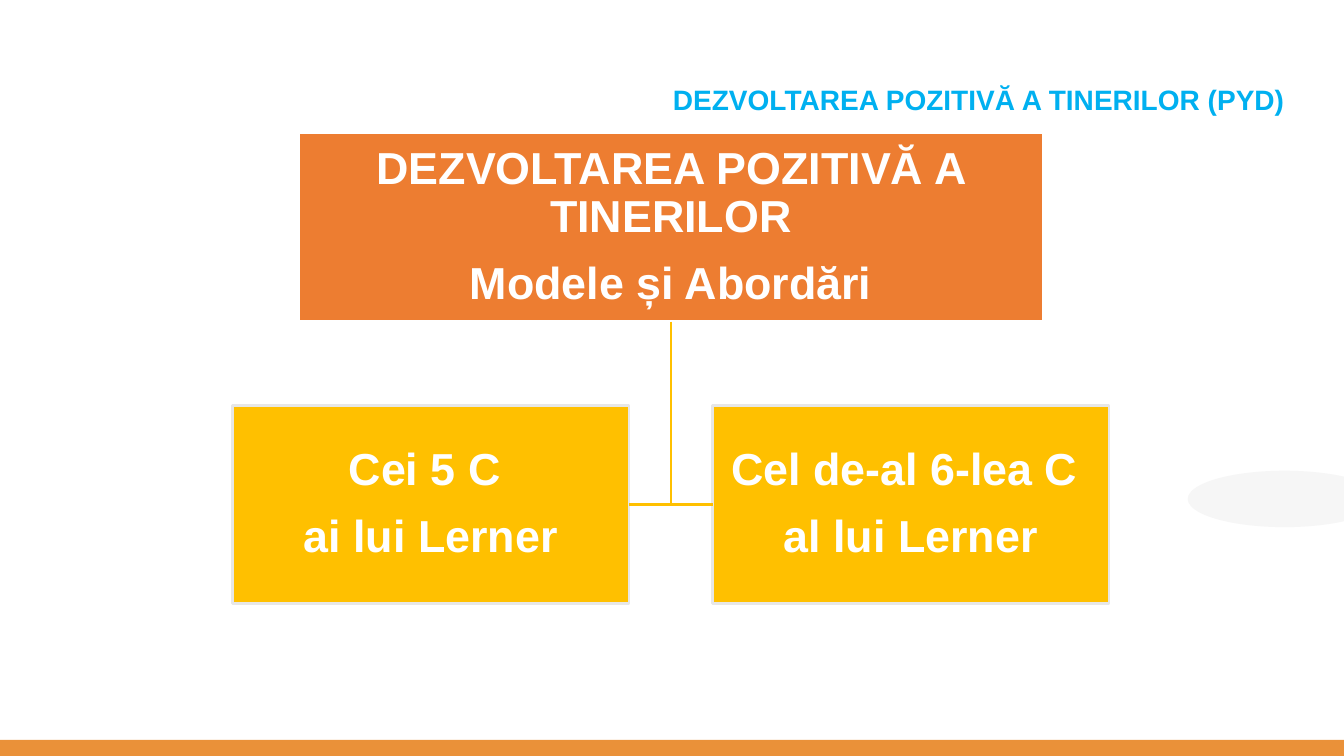
import pptx
import pptx.util
import pptx.dml.color
import pptx.enum.shapes
import pptx.enum.text
import pptx.oxml.ns
import lxml.etree

Inches = pptx.util.Inches
SHAPE = pptx.enum.shapes.MSO_SHAPE
ALIGN = pptx.enum.text.PP_ALIGN
ANCHOR = pptx.enum.text.MSO_ANCHOR
WIDE, HIGH = 13.33, 7.5
GOLD = "FFC000"


def paint(target, color):
    """Give a fill or a font a solid colour."""
    if hasattr(target, "solid"):
        target.solid()
        target = target.fore_color
    else:
        target = target.color
    target.rgb = pptx.dml.color.RGBColor.from_string(color)


def write(shape, lines, size=32, color="FFFFFF", align=ALIGN.CENTER,
          anchor=ANCHOR.MIDDLE, pad=(0.02, 0.02), after=0):
    frame = shape.text_frame
    frame.word_wrap = True
    frame.auto_size = pptx.enum.text.MSO_AUTO_SIZE.NONE
    frame.vertical_anchor = anchor
    frame.margin_left = frame.margin_right = Inches(pad[0])
    frame.margin_top = frame.margin_bottom = Inches(pad[1])
    frame.text = "\n".join(lines)
    for para in frame.paragraphs:
        para.alignment = align
        para.line_spacing = 0.9
        para.space_before = pptx.util.Pt(0)
        para.space_after = pptx.util.Pt(after)
        para.font.name = "Arial"
        para.font.size = pptx.util.Pt(size)
        para.font.bold = True
        paint(para.font, color)


def block(slide, box, fill, edge=None, kind=SHAPE.RECTANGLE):
    shape = slide.shapes.add_shape(kind, *map(Inches, box))
    shape.shadow.inherit = False
    paint(shape.fill, fill)
    if edge:
        paint(shape.line.fill, edge)
        shape.line.width = pptx.util.Pt(2)
    else:
        shape.line.fill.background()
    return shape


def link(slide, start, end):
    line = slide.shapes.add_connector(
        pptx.enum.shapes.MSO_CONNECTOR.STRAIGHT, *start, *end)
    paint(line.line.fill, GOLD)
    line.line.width = pptx.util.Pt(2)
    lxml.etree.SubElement(line._element.spPr, pptx.oxml.ns.qn("a:effectLst"))
    return line


def backdrop(slide, wide, high):
    oval = block(slide, (wide - 1.55, 4.67, 1.92, 0.56), "F5F5F5", kind=SHAPE.OVAL)
    tint = oval._element.spPr.find(".//" + pptx.oxml.ns.qn("a:srgbClr"))
    lxml.etree.SubElement(tint, pptx.oxml.ns.qn("a:alpha"), val="89000")
    block(slide, (0, high - 0.16, wide, 0.16), "EA9139")


def heading(slide, box, text):
    title = slide.shapes.title
    title.left, title.top, title.width, title.height = map(Inches, box)
    write(title, [text], size=20, color="00B0F0", align=ALIGN.RIGHT,
          anchor=ANCHOR.TOP, pad=(0.1, 0.05))


def chart_tree(slide, box, root_text, leaf_texts):
    """Draw a root box above two leaves, joined by a trunk and branches."""
    left, top, width, height = box
    root_w, root_h, leaf_w, leaf_h = 7.38, 1.87, 3.93, 1.97
    root = block(slide, (left + (width - root_w) / 2, top, root_w, root_h),
                 "ED7D31", "FFFFFF")
    write(root, root_text, after=12.6)
    mid = Inches(left + width / 2)
    joint = mid, Inches(top + height - leaf_h / 2)
    trunk = link(slide, (mid, root.top + root.height), joint)
    trunk.begin_connect(root, 2)
    leaf_top = top + height - leaf_h
    spots = (left, 3), (left + width - leaf_w, 1)
    for text, (leaf_left, side) in zip(leaf_texts, spots):
        leaf = block(slide, (leaf_left, leaf_top, leaf_w, leaf_h), GOLD, "E7E7E7")
        write(leaf, text, after=12.6)
        link(slide, joint, joint).end_connect(leaf, side)


def main():
    deck = pptx.Presentation()
    deck.slide_width, deck.slide_height = Inches(WIDE), Inches(HIGH)
    slide = deck.slides.add_slide(deck.slide_layouts[5])
    backdrop(slide, WIDE, HIGH)
    chart_tree(slide, (2.31, 1.32, 8.69, 4.67),
               ["DEZVOLTAREA POZITIVĂ A TINERILOR", "Modele și Abordări"],
               [["Cei 5 C ", "ai lui Lerner"],
                ["Cel de-al 6-lea C ", "al lui Lerner"]])
    heading(slide, (3.34, 0.81, 9.5, 0.92),
            "DEZVOLTAREA POZITIVĂ A TINERILOR (PYD)")
    deck.save("out.pptx")


if __name__ == "__main__":
    main()
